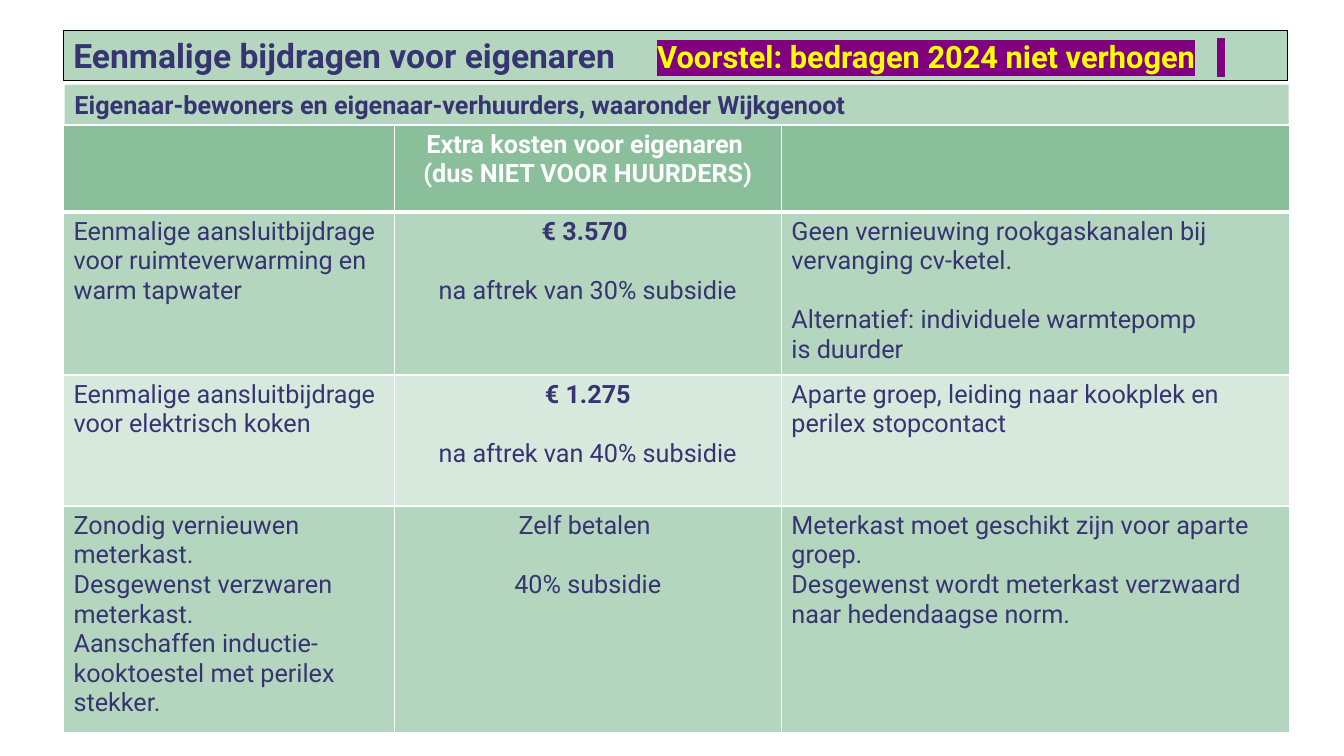
from lxml.etree import SubElement
from pptx import Presentation
from pptx.dml.color import RGBColor
from pptx.enum.shapes import MSO_SHAPE as Preset
from pptx.enum.text import MSO_ANCHOR as Anchor, PP_ALIGN as Align
from pptx.oxml import parse_xml
from pptx.oxml.ns import nsdecls, qn
from pptx.util import Inches, Pt

INDIGO = RGBColor(0x37, 0x34, 0x72)
GREEN = RGBColor(0x8B, 0xBF, 0x9C)
LIGHT_GREEN = RGBColor(0xB4, 0xD6, 0xBF)
PALE_GREEN = RGBColor(0xD7, 0xE9, 0xDD)
WHITE = RGBColor(0xFF, 0xFF, 0xFF)
BLACK = RGBColor(0, 0, 0)
YELLOW = RGBColor(0xFF, 0xFF, 0)
PURPLE = RGBColor(0x80, 0, 0x80)

COLUMN_WIDTHS = [32.8, 38.4, 50.4]
ROW_HEIGHTS = [8.6, 16.2, 13, 22.5]
ROW_FILLS = [GREEN, LIGHT_GREEN, PALE_GREEN, LIGHT_GREEN]
COSTS = [
    [[], [["Extra kosten voor eigenaren ", "(dus NIET VOOR HUURDERS)"]], []],
    [
        [["Eenmalige aansluitbijdrage", "voor ruimteverwarming en warm tapwater"]],
        [["€ 3.570 "], ["na aftrek van 30% subsidie"]],
        [["Geen vernieuwing rookgaskanalen bij vervanging cv-ketel."],
         ["Alternatief: individuele warmtepomp", "is duurder"]],
    ],
    [
        [["Eenmalige aansluitbijdrage", "voor elektrisch koken"]],
        [["€ 1.275"], ["na aftrek van 40% subsidie"]],
        [["Aparte groep, leiding naar kookplek en perilex stopcontact"]],
    ],
    [
        [["Zonodig vernieuwen meterkast.", "Desgewenst verzwaren meterkast.",
          "Aanschaffen inductie-kooktoestel met perilex stekker."]],
        [["Zelf betalen "], ["40% subsidie"]],
        [["Meterkast moet geschikt zijn voor aparte groep.",
          "Desgewenst wordt meterkast verzwaard naar hedendaagse norm."]],
    ],
]


class SlideBuilder:
    """Draws styled elements on a slide with a grid of tenths of an inch."""

    unit = Inches(0.1)
    font_name = "Roboto"
    body_size = 18
    block_gap = Pt(21)

    def __init__(self, slide):
        self.slide = slide

    def grid(self, *lengths):
        return [round(length * self.unit) for length in lengths]

    def style(self, font, size, color, bold):
        font.name, font.size, font.bold = self.font_name, Pt(size), bold
        font.color.rgb = color

    def bar(self, left, top, width, height, line=None):
        shape = self.slide.shapes.add_shape(
            Preset.RECTANGLE, *self.grid(left, top, width, height))
        shape.shadow.inherit = False
        shape.fill.solid()
        shape.fill.fore_color.rgb = LIGHT_GREEN
        if line is None:
            shape.line.fill.background()
        else:
            shape.line.color.rgb = line
            shape.line.width = Pt(0.75)
        shape.text_frame.word_wrap = True
        shape.text_frame.vertical_anchor = Anchor.MIDDLE
        paragraph = shape.text_frame.paragraphs[0]
        paragraph.alignment = Align.LEFT
        return paragraph

    def tab_stops(self, paragraph, *positions):
        tabs = SubElement(paragraph._p.get_or_add_pPr(), qn("a:tabLst"))
        for position in self.grid(*positions):
            SubElement(tabs, qn("a:tab"), pos=str(position), algn="l")

    def run(self, paragraph, text, size, color, highlight=None):
        run = paragraph.add_run()
        run.text = text
        self.style(run.font, size, color, True)
        if highlight is not None:
            run._r.rPr.find(qn("a:solidFill")).addnext(parse_xml(
                f'<a:highlight {nsdecls("a")}><a:srgbClr val="{highlight}"/></a:highlight>'))

    def table(self, left, top, widths, heights, contents, fills):
        table = self.slide.shapes.add_table(
            len(heights), len(widths),
            *self.grid(left, top, sum(widths), sum(heights))).table
        for column, width in zip(table.columns, self.grid(*widths)):
            column.width = width
        for row, height in zip(table.rows, self.grid(*heights)):
            row.height = height
        for row_index, row in enumerate(contents):
            for column_index, blocks in enumerate(row):
                cell = table.cell(row_index, column_index)
                cell.fill.solid()
                cell.fill.fore_color.rgb = fills[row_index]
                self.borders(cell, 3 if row_index == 1 else 1, 3 if row_index == 0 else 1)
                self.cell_text(cell, blocks, row_index == 0, column_index == 1)

    def borders(self, cell, top, bottom):
        properties = cell._tc.get_or_add_tcPr()
        sides = [("L", 1), ("R", 1), ("T", top), ("B", bottom)]
        for index, (side, width) in enumerate(sides):
            properties.insert(index, parse_xml(
                f'<a:ln{side} {nsdecls("a")} w="{Pt(width)}"><a:solidFill>'
                f'<a:srgbClr val="{WHITE}"/></a:solidFill></a:ln{side}>'))

    def cell_text(self, cell, blocks, header, centered):
        lines = [(text, number > 0 and index == 0)
                 for number, block in enumerate(blocks)
                 for index, text in enumerate(block)]
        for index, (text, gap) in enumerate(lines):
            frame = cell.text_frame
            paragraph = frame.add_paragraph() if index else frame.paragraphs[0]
            paragraph.text = text
            paragraph.alignment = Align.CENTER if centered else Align.LEFT
            if gap:
                paragraph.space_before = self.block_gap
            self.style(paragraph.font, self.body_size, WHITE if header else INDIGO,
                       header or text.startswith("€"))


def main():
    presentation = Presentation()
    presentation.slide_width = Inches(13.33)
    presentation.slide_height = Inches(7.5)
    builder = SlideBuilder(presentation.slides.add_slide(presentation.slide_layouts[6]))

    title = builder.bar(6.3, 3, 121.4, 5, line=BLACK)
    builder.tab_stops(title, 57.9, 113.4)
    builder.run(title, "Eenmalige bijdragen voor eigenaren\t", 24, INDIGO)
    builder.run(title, "Voorstel: bedragen 2024 niet verhogen\t", 22, YELLOW, PURPLE)
    builder.run(title, " ", 24, YELLOW, PURPLE)

    subtitle = builder.bar(6.4, 8.4, 121.4, 4)
    subtitle.text = "Eigenaar-bewoners en eigenaar-verhuurders, waaronder Wijkgenoot"
    builder.style(subtitle.font, 18, INDIGO, True)

    builder.table(6.3, 12.4, COLUMN_WIDTHS, ROW_HEIGHTS, COSTS, ROW_FILLS)
    presentation.save("out.pptx")


if __name__ == "__main__":
    main()
